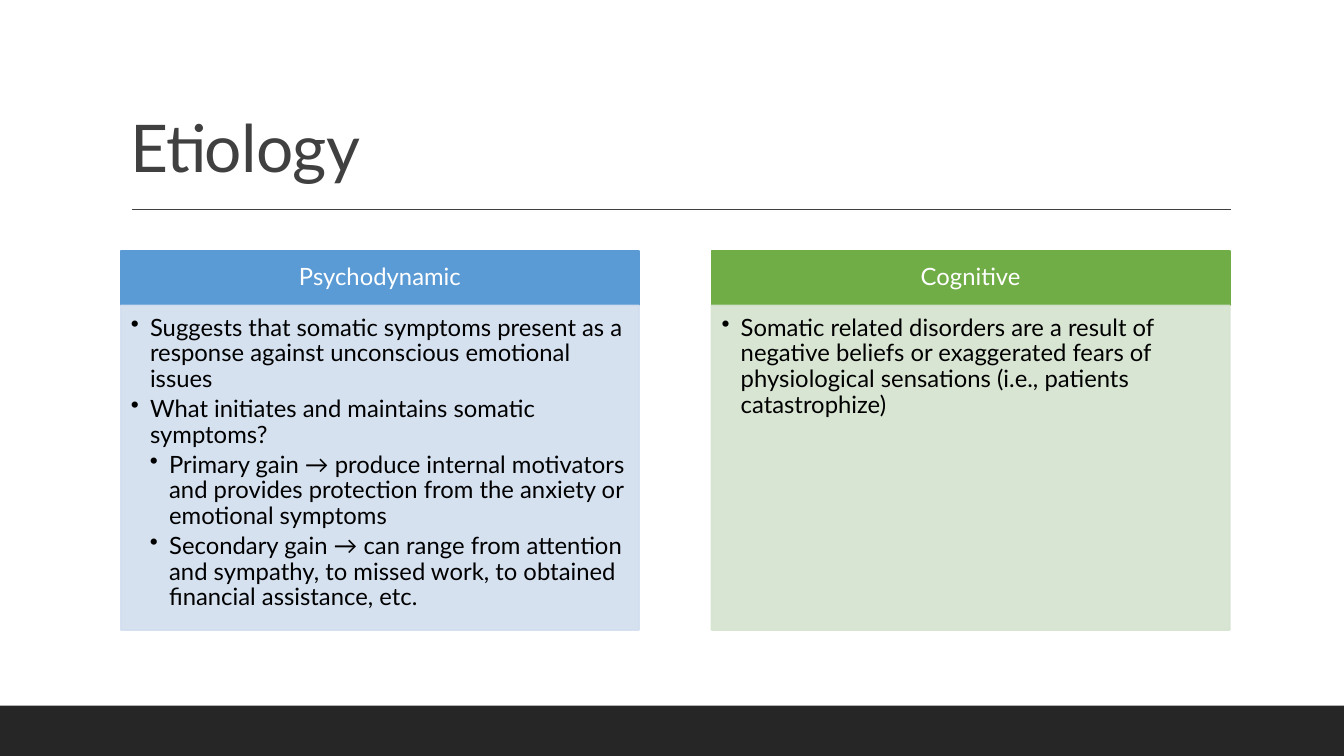
"""Build the Etiology slide: a title, a rule and two headed columns."""
from dataclasses import dataclass
from typing import Any

from lxml.etree import SubElement
from pptx import Presentation
from pptx.dml.color import RGBColor
from pptx.enum.shapes import MSO_CONNECTOR as Line, MSO_SHAPE as Shape
from pptx.enum.text import MSO_ANCHOR as Anchor, PP_ALIGN as Align
from pptx.oxml.ns import qn
from pptx.util import Inches, Pt

WHITE = RGBColor(0xFF, 0xFF, 0xFF)
BLACK = RGBColor(0x00, 0x00, 0x00)
GREY = RGBColor(0x40, 0x40, 0x40)
CHARCOAL = RGBColor(0x26, 0x26, 0x26)
BLUE = RGBColor(0x5B, 0x9B, 0xD5)
PALE_BLUE = RGBColor(0xD2, 0xDE, 0xEF)
GREEN = RGBColor(0x70, 0xAD, 0x47)
PALE_GREEN = RGBColor(0xD5, 0xE3, 0xCF)

WIDTH, HEIGHT = Inches(13.33), Inches(7.5)
FONT = "Lato"
INDENT = Inches(0.19)
LEFT, COLUMN_WIDTH, COLUMN_PITCH = 9, 38.55, 43.95
HEAD_TOP, HEAD_HEIGHT, BODY_HEIGHT = 33.2, 7.2, 42.93
RULE_LEFT, RULE_RIGHT, RULE_Y = 9.83, 91.58, 27.73
FOOTER_TOP = 93.33


@dataclass(frozen=True)
class Box:
    """Position and size in percent of the slide."""
    left: float
    top: float
    width: float
    height: float

    def emu(self) -> tuple[int, int, int, int]:
        """Return the box in slide units."""
        return (across(self.left), down(self.top),
                across(self.width), down(self.height))


@dataclass(frozen=True)
class Bullet:
    """One bulleted paragraph."""
    text: str
    level: int = 1


@dataclass(frozen=True)
class Column:
    """A headed column of bullets."""
    heading: str
    color: RGBColor
    tint: RGBColor
    bullets: tuple[Bullet, ...]


COLUMNS = (
    Column("Psychodynamic", BLUE, PALE_BLUE, (
        Bullet("Suggests that somatic symptoms present as a response against "
               "unconscious emotional issues"),
        Bullet("What initiates and maintains somatic symptoms?"),
        Bullet("Primary gain → produce internal motivators and provides "
               "protection from the anxiety or emotional symptoms", 2),
        Bullet("Secondary gain → can range from attention and sympathy, to "
               "missed work, to obtained financial assistance, etc.", 2),
    )),
    Column("Cognitive", GREEN, PALE_GREEN, (
        Bullet("Somatic related disorders are a result of negative beliefs or "
               "exaggerated fears of physiological sensations (i.e., patients "
               "catastrophize)"),
    )),
)


def across(share: float) -> int:
    """Convert a percentage of the slide width."""
    return round(WIDTH * share / 100)


def down(share: float) -> int:
    """Convert a percentage of the slide height."""
    return round(HEIGHT * share / 100)


def apply(target: Any, values: dict[str, Any]) -> None:
    """Set each named attribute."""
    for name, value in values.items():
        setattr(target, name, value)


def set_frame(tf: Any, anchor: Anchor, insets: tuple[float, ...]) -> None:
    """Set wrapping, anchor and insets given as left, top, right, bottom."""
    sides = ("margin_left", "margin_top", "margin_right", "margin_bottom")
    apply(tf, {"word_wrap": True, "vertical_anchor": anchor}
          | dict(zip(sides, map(Inches, insets))))


def write(p: Any, text: str, size: float, color: RGBColor,
          align: Align = Align.LEFT, after: float = 0) -> Any:
    """Write one run in a paragraph and return it."""
    apply(p, {"alignment": align, "line_spacing": 0.9, "space_after": Pt(after)})
    r = p.add_run()
    r.text = text
    apply(r.font, {"name": FONT, "size": Pt(size)})
    r.font.color.rgb = color
    return r


def add_bullet(p: Any, level: int) -> None:
    """Give a paragraph a hanging bullet."""
    p.level = level
    pPr = p._p.get_or_add_pPr()
    pPr.set("marL", str(INDENT * level))
    pPr.set("indent", str(-INDENT))
    SubElement(pPr, qn("a:buChar")).set("char", "•")


def add_rect(s: Any, box: Box, color: RGBColor, outline: float = 0,
             opacity: int = 100) -> Any:
    """Draw a rectangle with an optional outline of its own colour."""
    sp = s.shapes.add_shape(Shape.RECTANGLE, *box.emu())
    sp.shadow.inherit = False
    sp.fill.solid()
    sp.fill.fore_color.rgb = color
    if outline:
        sp.line.width = Pt(outline)
        sp.line.color.rgb = color
    else:
        sp.line.fill.background()
    if opacity < 100:
        for clr in sp._element.spPr.iter(qn("a:srgbClr")):
            SubElement(clr, qn("a:alpha")).set("val", str(opacity * 1000))
    return sp


def add_title(s: Any, text: str) -> None:
    """Draw the slide title and the rule beneath it."""
    tf = s.shapes.add_textbox(*Box(LEFT, 4.13, 82.5, 21.2).emu()).text_frame
    set_frame(tf, Anchor.BOTTOM, (0.1, 0.05, 0.1, 0.05))
    r = write(tf.paragraphs[0], text, 47, GREY)
    r._r.get_or_add_rPr().set("spc", "-50")
    rule = s.shapes.add_connector(Line.STRAIGHT, across(RULE_LEFT), down(RULE_Y),
                                  across(RULE_RIGHT), down(RULE_Y))
    rule.line.width = Pt(1)
    rule.line.color.rgb = GREY
    SubElement(rule._element.spPr, qn("a:effectLst"))


def add_column(s: Any, index: int, column: Column) -> None:
    """Draw a heading bar and its bulleted body."""
    left = LEFT + index * COLUMN_PITCH
    head = add_rect(s, Box(left, HEAD_TOP, COLUMN_WIDTH, HEAD_HEIGHT),
                    column.color, 1.25)
    set_frame(head.text_frame, Anchor.MIDDLE, (0.13, 0.08, 0.13, 0.08))
    write(head.text_frame.paragraphs[0], column.heading, 17, WHITE, Align.CENTER)
    body = add_rect(s, Box(left, HEAD_TOP + HEAD_HEIGHT, COLUMN_WIDTH, BODY_HEIGHT),
                    column.tint, 1.25, 90)
    tf = body.text_frame
    set_frame(tf, Anchor.TOP, (0.1, 0.1, 0.13, 0.15))
    for i, bullet in enumerate(column.bullets):
        p = tf.add_paragraph() if i else tf.paragraphs[0]
        write(p, bullet.text, 17, BLACK, after=3)
        add_bullet(p, bullet.level)


def main() -> None:
    """Build and save the slide."""
    prs = Presentation()
    apply(prs, {"slide_width": WIDTH, "slide_height": HEIGHT})
    s = prs.slides.add_slide(prs.slide_layouts[6])
    s.background.fill.solid()
    s.background.fill.fore_color.rgb = WHITE
    add_title(s, "Etiology")
    add_rect(s, Box(0, FOOTER_TOP, 100, 100 - FOOTER_TOP), CHARCOAL)
    for index, column in enumerate(COLUMNS):
        add_column(s, index, column)
    prs.save("out.pptx")


if __name__ == "__main__":
    main()
